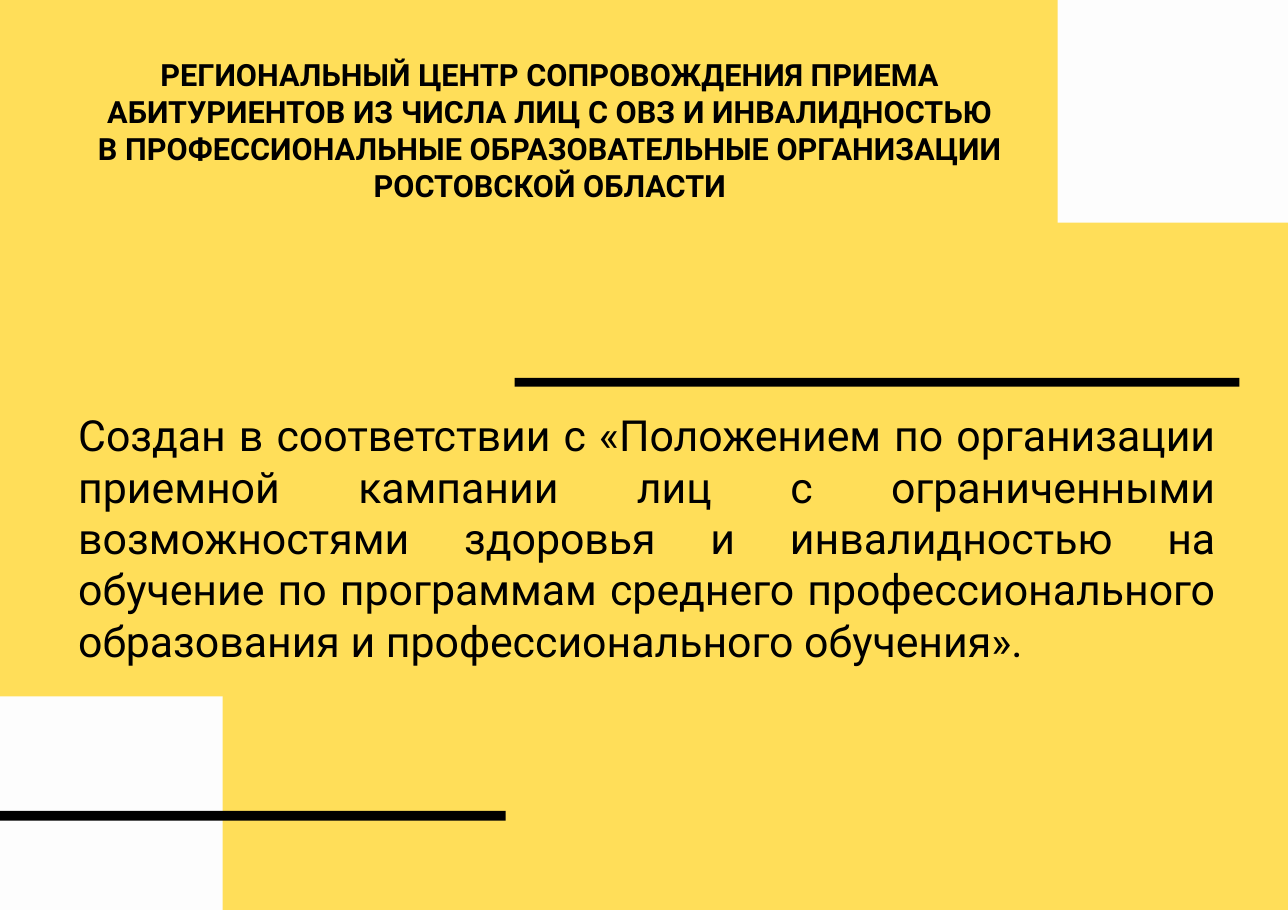
from lxml import etree
from pptx import Presentation
from pptx.dml.color import RGBColor
from pptx.enum.shapes import MSO_SHAPE as Shape
from pptx.enum.text import MSO_ANCHOR as Anchor, MSO_AUTO_SIZE as AutoSize, PP_ALIGN as Align
from pptx.oxml.ns import qn
from pptx.util import Inches, Pt

WIDTH, HEIGHT = 11.69, 8.26
YELLOW, WHITE, BLACK = "FFDE59", "FDFDFD", "000000"

TITLE = (
    "РЕГИОНАЛЬНЫЙ ЦЕНТР СОПРОВОЖДЕНИЯ ПРИЕМА АБИТУРИЕНТОВ "
    "ИЗ ЧИСЛА ЛИЦ С ОВЗ И ИНВАЛИДНОСТЬЮ\v"
    "В ПРОФЕССИОНАЛЬНЫЕ ОБРАЗОВАТЕЛЬНЫЕ ОРГАНИЗАЦИИ РОСТОВСКОЙ ОБЛАСТИ"
)
BODY = (
    "Создан в соответствии с «Положением по организации приемной кампании "
    "лиц с ограниченными возможностями здоровья и инвалидностью на обучение "
    "по программам среднего профессионального образования "
    "и профессионального обучения»."
)


def color(hex_string):
    return RGBColor.from_string(hex_string)


class SlideBuilder:
    """Holds the text style and the slide being built."""

    font_name = "Roboto"
    text_color = BLACK

    def __init__(self, slide, background):
        self.slide = slide
        fill = slide.background.fill
        fill.solid()
        fill.fore_color.rgb = color(background)

    def block(self, left, top, width, height, fill):
        shape = self.slide.shapes.add_shape(
            Shape.RECTANGLE, Inches(left), Inches(top), Inches(width), Inches(height))
        shape.shadow.inherit = False
        shape.fill.solid()
        shape.fill.fore_color.rgb = color(fill)
        shape.line.fill.background()

    def text(self, placeholder, box, text, size, align, bold=False):
        placeholder.left, placeholder.top, placeholder.width, placeholder.height = map(Inches, box)
        frame = placeholder.text_frame
        frame.text = text
        frame.word_wrap = True
        frame.auto_size = AutoSize.NONE
        frame.vertical_anchor = Anchor.TOP
        paragraph = frame.paragraphs[0]
        paragraph.alignment = align
        font = paragraph.font
        font.name, font.size, font.bold = self.font_name, Pt(size), bold
        font.color.rgb = color(self.text_color)
        return paragraph

    def title(self, box, text, size):
        self.text(self.slide.shapes.title, box, text, size, Align.CENTER, bold=True)

    def body(self, box, text, size):
        paragraph = self.text(self.slide.placeholders[1], box, text, size, Align.JUSTIFY)
        # Plain paragraph: no bullet and no hanging indent
        properties = paragraph._p.get_or_add_pPr()
        properties.set("marL", "0")
        properties.set("indent", "0")
        properties.insert(0, etree.Element(qn("a:buNone")))


def main():
    presentation = Presentation()
    presentation.slide_width, presentation.slide_height = Inches(WIDTH), Inches(HEIGHT)
    slide = presentation.slides.add_slide(presentation.slide_layouts[1])
    builder = SlideBuilder(slide, YELLOW)

    # Corner blocks and the bars beside them
    builder.block(9.6, 0, WIDTH - 9.6, 2.02, WHITE)
    builder.block(4.67, 3.43, 6.58, 0.08, BLACK)
    builder.block(0, 6.32, 2.02, HEIGHT - 6.32, WHITE)
    builder.block(0, 7.36, 4.59, 0.09, BLACK)

    # Heading and statement
    builder.title((0.3, 0.46, 9.38, 2.03), TITLE, 20)
    builder.body((0.61, 3.66, 10.52, 3.28), BODY, 28)

    presentation.save("out.pptx")


if __name__ == "__main__":
    main()
